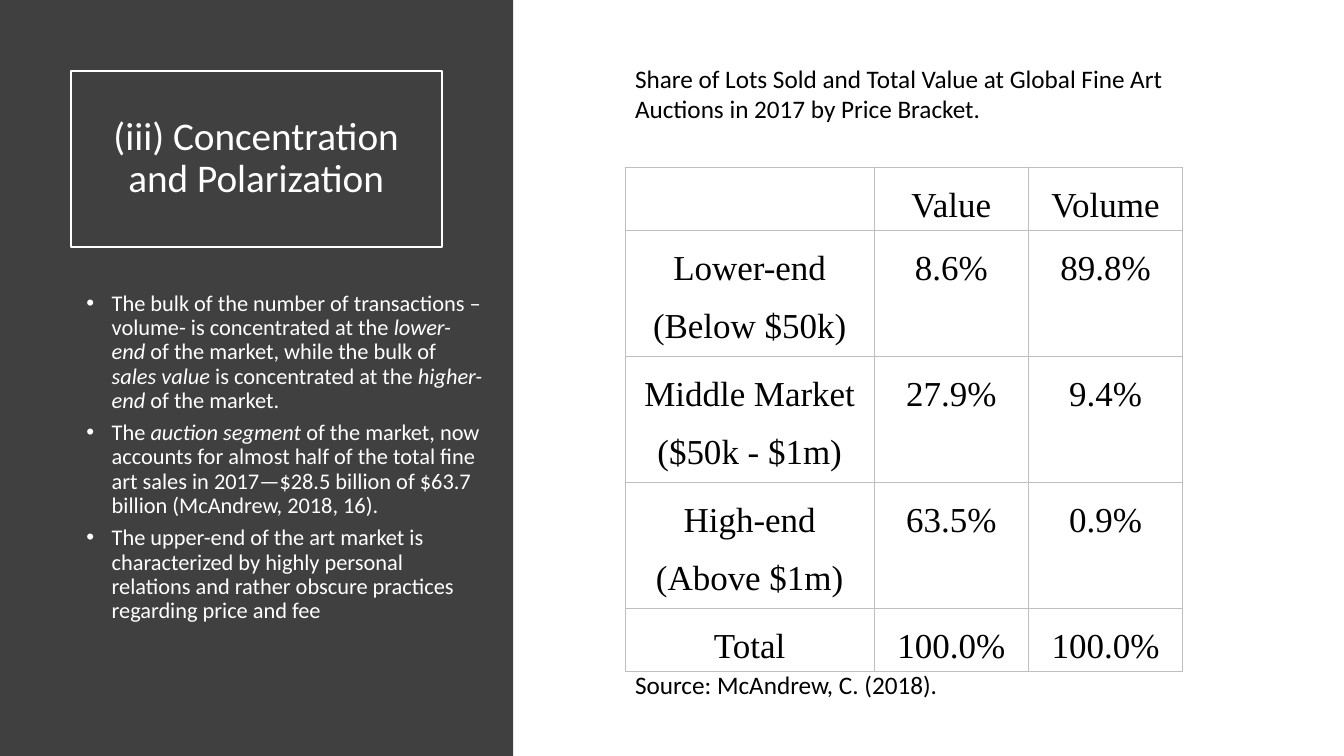
from lxml.etree import SubElement
from pptx import Presentation
from pptx.dml.color import RGBColor
from pptx.enum.shapes import MSO_SHAPE
from pptx.enum.text import MSO_ANCHOR, PP_ALIGN
from pptx.oxml.ns import qn
from pptx.util import Emu, Pt

PX = 9144  # one hundredth of an inch
COLORS = {"panel": "404040", "light": "FFFFFF", "dark": "000000", "grid": "BFBFBF"}

TITLE = "(iii) Concentration and Polarization"
# Within each point, every second piece is italic.
POINTS = [
    ["The bulk of the number of transactions –volume- is concentrated at the ",
     "lower-end", " of the market, while the bulk of ", "sales value",
     " is concentrated at the ", "higher-end", " of the market."],
    ["The ", "auction segment",
     " of the market, now accounts for almost half of the total fine art sales "
     "in 2017—$28.5 billion of $63.7 billion (McAndrew, 2018, 16)."],
    ["The upper-end of the art market is characterized by highly personal "
     "relations and rather obscure practices regarding price and fee"],
]
CAPTION = ("Share of Lots Sold and Total Value at Global Fine Art Auctions "
           "in 2017 by Price Bracket.")
SOURCE = "Source: McAndrew, C. (2018)."
SHARES = [
    ["", "Value", "Volume"],
    ["Lower-end (Below $50k)", "8.6%", "89.8%"],
    ["Middle Market ($50k - $1m)", "27.9%", "9.4%"],
    ["High-end (Above $1m)", "63.5%", "0.9%"],
    ["Total", "100.0%", "100.0%"],
]
COLUMN_WIDTHS = [247, 153, 153]
ROW_HEIGHTS = [50, 101, 101, 101, 50]

CENTRED = {"alignment": PP_ALIGN.CENTER, "line_spacing": 0.9}
POINT = {"alignment": PP_ALIGN.LEFT, "line_spacing": 0.9, "space_after": Pt(6)}
CELL_TEXT = {"alignment": PP_ALIGN.CENTER, "line_spacing": 1.5}
CELL = {"margin_left": Emu(15 * PX), "margin_right": Emu(15 * PX),
        "margin_top": 0, "margin_bottom": 0}


def apply(target, values):
    for name, value in values.items():
        setattr(target, name, value)


def rgb(name):
    return RGBColor.from_string(COLORS[name])


def emu(*lengths):
    return [Emu(length * PX) for length in lengths]


def write(paragraph, text, size, color, font="Calibri", italic=False):
    run = paragraph.add_run()
    run.text = text
    apply(run.font, {"name": font, "size": Pt(size), "italic": italic})
    run.font.color.rgb = rgb(color)


def add_frame(slide, box):
    frame = slide.shapes.add_textbox(*emu(*box)).text_frame
    frame.word_wrap = True
    return frame


def add_rectangle(slide, box):
    rectangle = slide.shapes.add_shape(MSO_SHAPE.RECTANGLE, *emu(*box))
    rectangle.shadow.inherit = False
    return rectangle


def add_bullet(paragraph):
    properties = paragraph._p.get_or_add_pPr()
    properties.set("marL", str(31 * PX))
    properties.set("indent", str(-25 * PX))
    SubElement(properties, qn("a:buFont"), typeface="Arial")
    SubElement(properties, qn("a:buChar"), char="•")


def add_title(slide, box):
    title = add_rectangle(slide, box)
    title.fill.background()
    title.line.color.rgb = rgb("light")
    title.line.width = Pt(1.5)
    frame = title.text_frame
    apply(frame, {"word_wrap": True, "vertical_anchor": MSO_ANCHOR.MIDDLE,
                  "margin_left": Emu(18 * PX), "margin_right": Emu(18 * PX)})
    apply(frame.paragraphs[0], CENTRED)
    write(frame.paragraphs[0], TITLE, 28, "light")


def add_points(slide, box):
    frame = add_frame(slide, box)
    for number, pieces in enumerate(POINTS):
        paragraph = frame.add_paragraph() if number else frame.paragraphs[0]
        apply(paragraph, POINT)
        add_bullet(paragraph)
        for position, piece in enumerate(pieces):
            write(paragraph, piece, 16, "light", italic=position % 2 == 1)


def add_panel(slide, box):
    """Dark side panel with the boxed title and the points."""
    left, top, width, height = box
    panel = add_rectangle(slide, box)
    panel.fill.solid()
    panel.fill.fore_color.rgb = rgb("panel")
    panel.line.fill.background()
    add_title(slide, (left + 70, top + 70, width - 141, 175))
    add_points(slide, (left + 70, top + 285, width - 89, 374))


def draw_borders(cell):
    properties = cell._tc.get_or_add_tcPr()
    for side in ("a:lnL", "a:lnR", "a:lnT", "a:lnB"):
        border = SubElement(properties, qn(side), w=str(Pt(1)))
        fill = SubElement(border, qn("a:solidFill"))
        SubElement(fill, qn("a:srgbClr"), val=COLORS["grid"])


def add_shares(slide, left, top):
    table = slide.shapes.add_table(
        len(SHARES), len(COLUMN_WIDTHS),
        *emu(left, top, sum(COLUMN_WIDTHS), sum(ROW_HEIGHTS))).table
    apply(table, {"first_row": False, "horz_banding": False})
    for column, width in zip(table.columns, COLUMN_WIDTHS):
        column.width = Emu(width * PX)
    for row, height, texts in zip(table.rows, ROW_HEIGHTS, SHARES):
        row.height = Emu(height * PX)
        for cell, text in zip(row.cells, texts):
            apply(cell, CELL)
            draw_borders(cell)
            cell.fill.background()
            if text:
                paragraph = cell.text_frame.paragraphs[0]
                apply(paragraph, CELL_TEXT)
                write(paragraph, text, 25, "dark", "Times New Roman")


def add_auction_data(slide, box):
    """Caption, table of shares and source line, from top to bottom."""
    left, top, width, height = box
    caption = add_frame(slide, (left, top, width, 101))
    write(caption.paragraphs[0], CAPTION, 18, "dark")
    add_shares(slide, left, top + 108)
    source = add_frame(slide, (left, top + height - 71, width, 71))
    write(source.paragraphs[0], SOURCE, 18, "dark")


def main():
    deck = Presentation()
    deck.slide_width, deck.slide_height = emu(1333, 750)
    slide = deck.slides.add_slide(deck.slide_layouts[6])
    add_panel(slide, (0, 0, 509, 750))
    add_auction_data(slide, (620, 58, 576, 672))
    deck.save("out.pptx")


if __name__ == "__main__":
    main()
